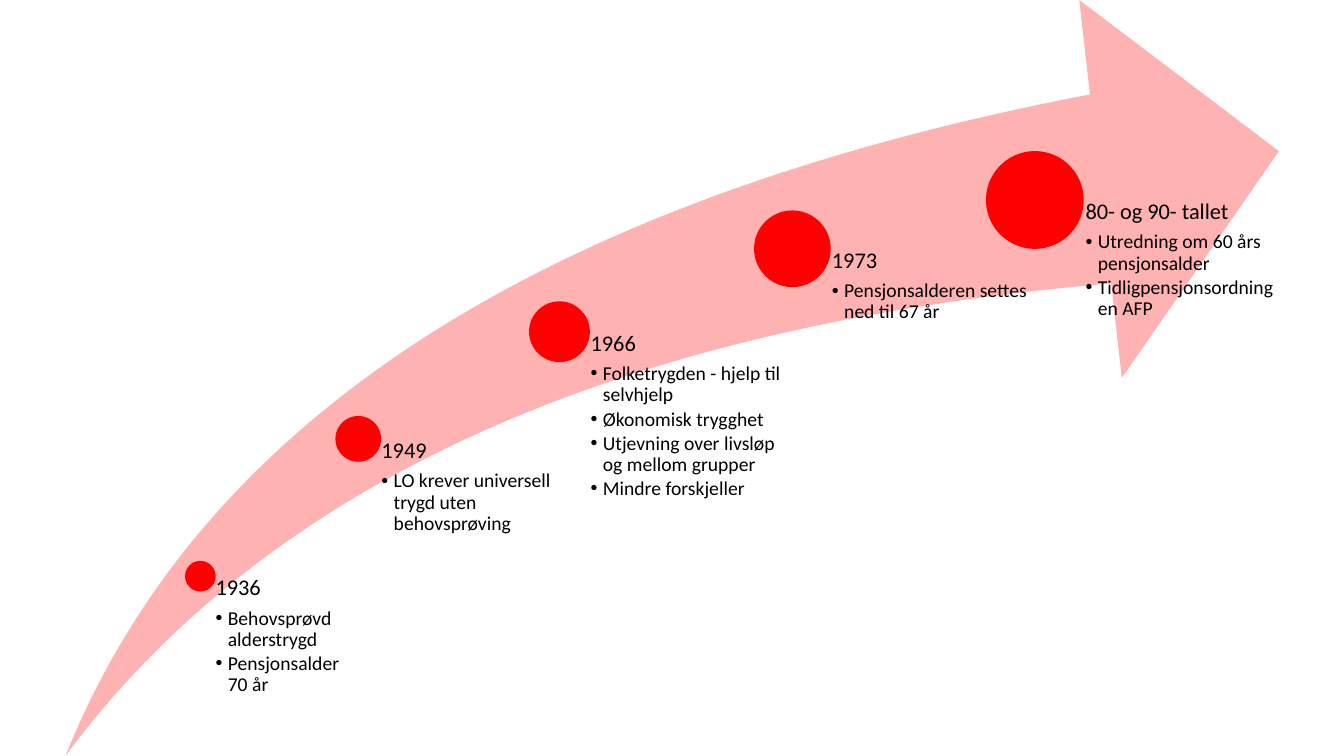
from collections import namedtuple

from lxml import etree
from pptx import Presentation
from pptx import util as u
from pptx.dml.color import RGBColor
from pptx.enum import shapes, text
from pptx.oxml import ns

Box = namedtuple("Box", "left top width height")
Event = namedtuple("Event", "x y diameter width title points")

COLOURS = {"red": "FF0000", "text": "000000"}
FONT = "Calibri"
INDENT = u.Cm(0.31)

EVENTS = [
    Event(3.4, 14.52, 0.72, 3.99, "1936", ["Behovsprøvd alderstrygd", "Pensjonsalder 70 år"]),
    Event(7.38, 11.06, 1.1, 5.05, "1949", ["LO krever universell trygd uten behovsprøving"]),
    Event(12.45, 8.36, 1.48, 5.89, "1966", [
        "Folketrygden - hjelp til selvhjelp",
        "Økonomisk trygghet",
        "Utjevning over livsløp og mellom grupper",
        "Mindre forskjeller",
    ]),
    Event(18.32, 6.27, 1.88, 6.1, "1973", ["Pensjonsalderen settes ned til 67 år"]),
    Event(24.43, 5.04, 2.41, 6.1, "80- og 90- tallet", [
        "Utredning om 60 års pensjonsalder",
        "Tidligpensjonsordningen AFP",
    ]),
]


def add_solid(group, kind, box):
    """Add a red preset shape that fills the box, given in centimetres."""
    solid = group.shapes.add_shape(kind, *map(u.Cm, box))
    solid.shadow.inherit = False
    solid.fill.solid()
    solid.fill.fore_color.rgb = RGBColor.from_string(COLOURS["red"])
    return solid


def add_arrow(group, box):
    """Add the translucent swoosh arrow."""
    arrow = add_solid(group, shapes.MSO_SHAPE.SWOOSH_ARROW, box)
    arrow.adjustments[0] = 0.25
    arrow.adjustments[1] = 0.25
    arrow.line.fill.background()
    colour = arrow.fill._xPr.find(".//" + ns.qn("a:srgbClr"))
    etree.SubElement(colour, ns.qn("a:alpha"), val="30000")


def format_para(para, size, gap):
    """Set the font and the spacing of a paragraph."""
    para.line_spacing = 0.9
    para.space_after = u.Pt(gap)
    for span in para.runs:
        span.font.name = FONT
        span.font.size = u.Pt(size)
        span.font.color.rgb = RGBColor.from_string(COLOURS["text"])


def add_bullet(para):
    """Give a paragraph a hanging bullet."""
    para.level = 1
    props = para._p.get_or_add_pPr()
    props.set("marL", str(INDENT))
    props.set("indent", str(-INDENT))
    etree.SubElement(props, ns.qn("a:buFont"), typeface="Arial")
    etree.SubElement(props, ns.qn("a:buChar"), char="•")


def add_event(group, box, event):
    """Add a dot and, from its centre to the bottom of the box, its text."""
    x, y = box.left + event.x, box.top + event.y
    radius = event.diameter / 2
    dot_box = Box(x - radius, y - radius, event.diameter, event.diameter)
    dot = add_solid(group, shapes.MSO_SHAPE.OVAL, dot_box)
    dot.line.color.rgb = RGBColor.from_string(COLOURS["red"])
    dot.line.width = u.Pt(1.5)

    text_box = Box(x, y, event.width, box.top + box.height - y)
    frame = group.shapes.add_textbox(*map(u.Cm, text_box)).text_frame
    frame.word_wrap = True
    frame.vertical_anchor = text.MSO_ANCHOR.TOP
    frame.margin_left = u.Cm(event.diameter * 0.53)
    frame.margin_top = frame.margin_right = frame.margin_bottom = 0
    frame.text = event.title
    format_para(frame.paragraphs[0], 16, 5.6)
    for point in event.points:
        para = frame.add_paragraph()
        para.text = point
        format_para(para, 14, 2.1)
        add_bullet(para)


def add_timeline(page, box):
    """Add the arrow and its events as one group."""
    group = page.shapes.add_group_shape()
    add_arrow(group, box)
    for event in EVENTS:
        add_event(group, box, event)


def main():
    """Build the deck and save it."""
    deck = Presentation()
    deck.slide_width, deck.slide_height = u.Cm(33.87), u.Cm(19.05)
    page = deck.slides.add_slide(deck.slide_layouts[6])
    add_timeline(page, Box(1.65, 0, 30.58, 19.05))
    deck.save("out.pptx")


if __name__ == "__main__":
    main()
